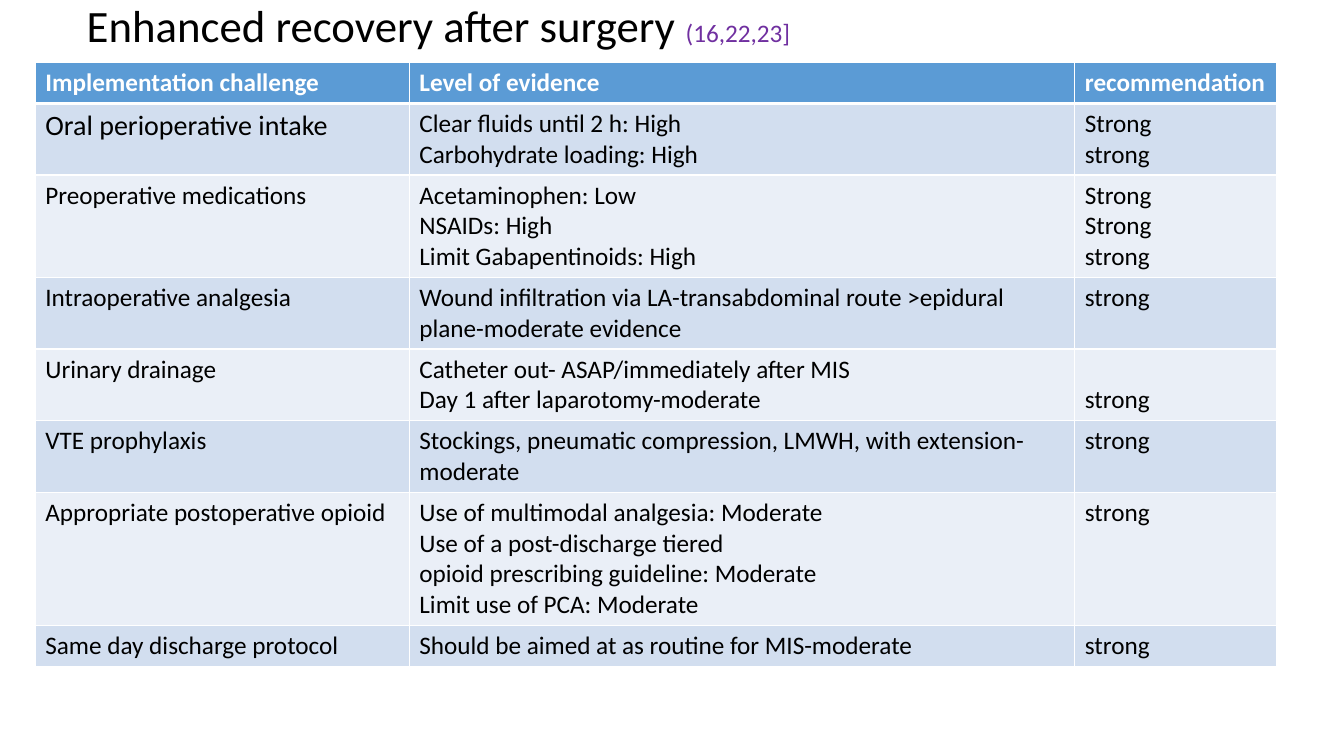
from lxml.etree import SubElement
from pptx import Presentation
from pptx.dml.color import RGBColor
from pptx.enum.text import MSO_ANCHOR, MSO_AUTO_SIZE, PP_ALIGN
from pptx.oxml.ns import qn
from pptx.util import Inches, Pt

LINE, PAD = 0.305, 0.05  # height of an 18 pt line, cell margin
WIDTHS = [3.71, 6.6, 2]
HEAD = ["Implementation challenge", "Level of evidence", "recommendation"]
ROWS = [
    ["Oral perioperative intake",
     "Clear fluids until 2 h: High\nCarbohydrate loading: High",
     "Strong\nstrong"],
    ["Preoperative medications",
     "Acetaminophen: Low\nNSAIDs: High\nLimit Gabapentinoids: High",
     "Strong\nStrong\nstrong"],
    ["Intraoperative analgesia",
     "Wound infiltration via LA-transabdominal route >epidural "
     "plane-moderate evidence",
     "strong"],
    ["Urinary drainage",
     "Catheter out- ASAP/immediately after MIS\n"
     "Day 1 after laparotomy-moderate",
     "strong"],
    ["VTE prophylaxis",
     "Stockings, pneumatic compression, LMWH, with extension-moderate",
     "strong"],
    ["Appropriate postoperative opioid",
     "Use of multimodal analgesia: Moderate\nUse of a post-discharge tiered\n"
     "opioid prescribing guideline: Moderate\nLimit use of PCA: Moderate",
     "strong"],
    ["Same day discharge protocol",
     "Should be aimed at as routine for MIS-moderate",
     "strong"],
]
LINES = [1, 2, 3, 2, 2, 2, 4, 1]  # text lines in each row


def color(code):
    return RGBColor.from_string(code)


class Deck:
    face = "Calibri"
    ink, white, cite = "000000", "FFFFFF", "7030A0"
    blue, bands = "5B9BD5", ["D2DEEF", "EAEFF7"]

    def __init__(self, slide):
        self.slide = slide

    def style(self, font, size, code, bold=False):
        font.name, font.size, font.bold = self.face, Pt(size), bold
        font.color.rgb = color(code)

    def title(self, box, parts):
        shape = self.slide.shapes.title
        shape.left, shape.top, shape.width, shape.height = map(Inches, box)
        frame = shape.text_frame
        frame.auto_size = MSO_AUTO_SIZE.NONE
        frame.vertical_anchor = MSO_ANCHOR.MIDDLE
        para = frame.paragraphs[0]
        para.alignment, para.line_spacing = PP_ALIGN.LEFT, 0.9
        for text, size, code in parts:
            run = para.add_run()
            run.text = text
            self.style(run.font, size, code)

    def edges(self, cell, top, bottom):
        props = cell._tc.get_or_add_tcPr()
        sides = [("L", 1), ("R", 1), ("T", top), ("B", bottom)]
        for spot, (side, width) in enumerate(sides):
            line = SubElement(props, qn(f"a:ln{side}"), w=str(Pt(width)))
            fill = SubElement(line, qn("a:solidFill"))
            SubElement(fill, qn("a:srgbClr"), val=self.white)
            props.insert(spot, line)

    def cell(self, cell, text, fill, code, bold=False, size=18):
        cell.fill.solid()
        cell.fill.fore_color.rgb = color(fill)
        cell.margin_top = cell.margin_bottom = Inches(PAD)
        cell.text = text
        for para in cell.text_frame.paragraphs:
            self.style(para.font, size, code, bold)

    def table(self, left, top, widths, heights, head, rows):
        shape = self.slide.shapes.add_table(
            len(heights), len(widths), Inches(left), Inches(top),
            Inches(sum(widths)), Inches(sum(heights)))
        grid = shape.table
        for col, width in zip(grid.columns, widths):
            col.width = Inches(width)
        for row, height in zip(grid.rows, heights):
            row.height = Inches(height)
        for r, texts in enumerate([head] + rows):
            for c, text in enumerate(texts):
                cell = grid.cell(r, c)
                if r == 0:
                    self.cell(cell, text, self.blue, self.white, True)
                else:
                    self.cell(cell, text, self.bands[(r - 1) % 2], self.ink)
                self.edges(cell, 3 if r == 1 else 1, 3 if r == 0 else 1)
        return grid


def main():
    prs = Presentation()
    prs.slide_width, prs.slide_height = Inches(13.33), Inches(7.5)
    deck = Deck(prs.slides.add_slide(prs.slide_layouts[5]))

    # Title with its citation
    deck.title((0.76, 0, 11.37, 0.55), [
        ("Enhanced recovery after surgery ", 32, deck.ink),
        ("(16,22,23]", 18, deck.cite)])

    # Evidence table
    heights = [count * LINE + 2 * PAD for count in LINES]
    grid = deck.table(0.35, 0.62, WIDTHS, heights, HEAD, ROWS)
    grid.cell(1, 0).text_frame.paragraphs[0].font.size = Pt(20)
    # Level with the second line of evidence on urinary drainage
    grid.cell(4, 2).margin_top = Inches(PAD + LINE)

    prs.save("out.pptx")


if __name__ == "__main__":
    main()
